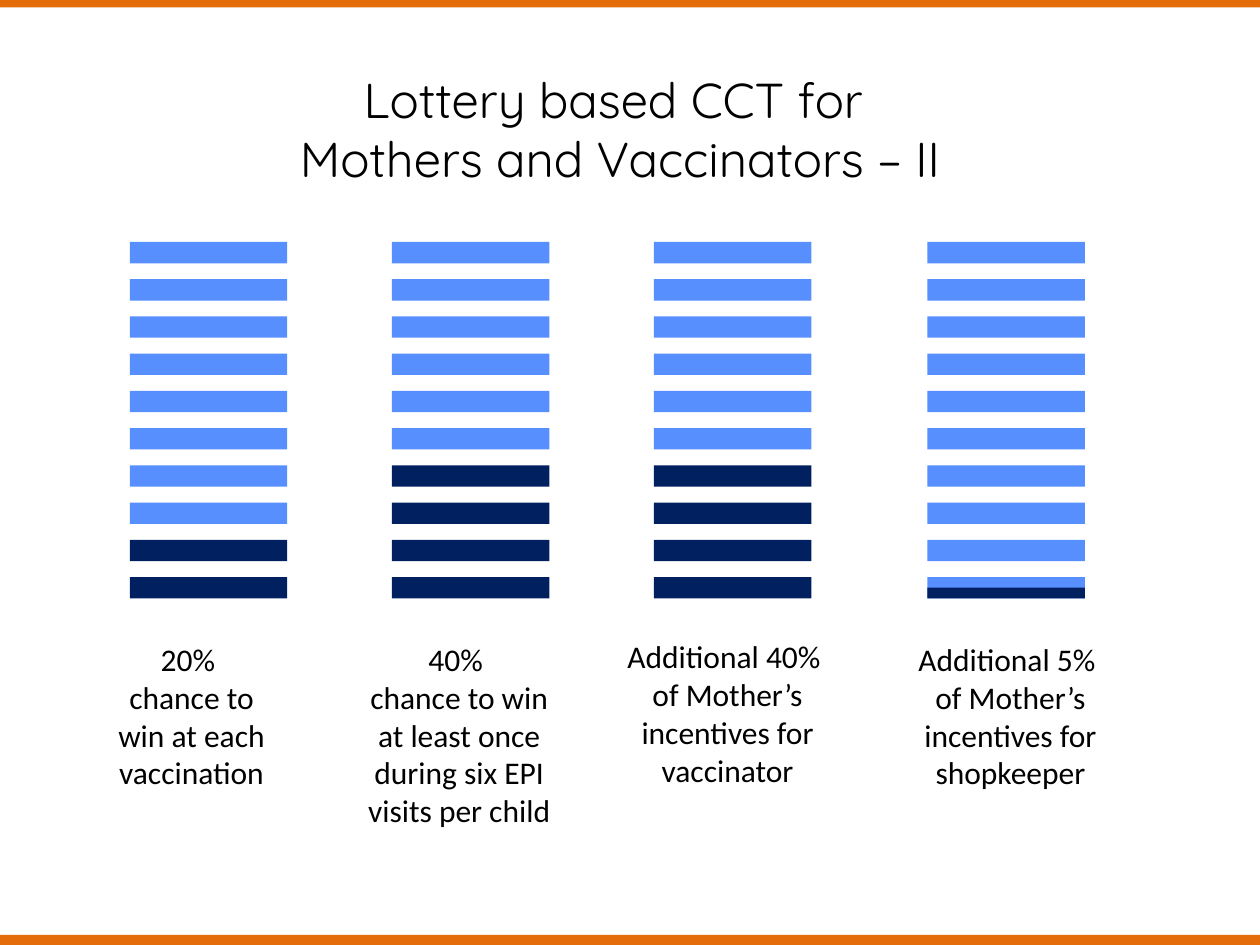
"""Build a slide of four striped bars that show lottery chances and incentives."""
import pptx
import pptx.dml.color
import pptx.enum.shapes
import pptx.enum.text
import pptx.util

Inches = pptx.util.Inches

BLACK, LIGHT_BLUE, NAVY, ORANGE = "000000", "578FFF", "002060", "E46C0A"
STRIPES, STRIPE_TOP, STRIPE_SPAN = 10, 1.92, 2.66
STRIPE_WIDTH, STRIPE_HEIGHT = 1.25, 0.17

COLUMNS = [
    (1.03, 2, ["20% ", "chance to win at each vaccination"],
     (0.75, 5.03, 1.54, 1.31)),
    (3.11, 4, ["40% ", "chance to win at least once during six EPI visits per child"],
     (2.78, 5.03, 1.73, 1.62)),
    (5.19, 4, ["Additional 40% ", "of Mother’s incentives for vaccinator"],
     (4.86, 5.01, 1.83, 1.31)),
    (7.36, 0.5, ["Additional 5% ", "of Mother’s incentives for shopkeeper"],
     (7.1, 5.03, 1.84, 1.31)),
]
BORDERS = [(0, 7.45), (-0.04, 7.42), (0, -0.02)]


def color(value):
    return pptx.dml.color.RGBColor.from_string(value)


class SlideBuilder:
    title_font = {"name": "Quicksand", "size": pptx.util.Pt(28), "bold": False}
    label_font = {"name": "Calibri", "size": pptx.util.Pt(18), "bold": False}

    def __init__(self, slide):
        self.slide = slide

    def fill_text(self, shape, lines, font):
        frame = shape.text_frame
        frame.word_wrap = True
        frame.auto_size = pptx.enum.text.MSO_AUTO_SIZE.SHAPE_TO_FIT_TEXT
        frame.text = "\n".join(lines)
        for paragraph in frame.paragraphs:
            paragraph.alignment = pptx.enum.text.PP_ALIGN.CENTER
            for run in paragraph.runs:
                for name, value in font.items():
                    setattr(run.font, name, value)
                run.font.color.rgb = color(BLACK)

    def title(self, lines, left, top, width, height):
        shape = self.slide.shapes.title
        box = {"left": left, "top": top, "width": width, "height": height}
        for name, value in box.items():
            setattr(shape, name, Inches(value))
        self.fill_text(shape, lines, self.title_font)

    def label(self, lines, *box):
        shape = self.slide.shapes.add_textbox(*map(Inches, box))
        self.fill_text(shape, lines, self.label_font)

    def rectangle(self, fill, *box):
        shape = self.slide.shapes.add_shape(
            pptx.enum.shapes.MSO_SHAPE.RECTANGLE, *map(Inches, box))
        shape.shadow.inherit = False
        shape.fill.solid()
        shape.fill.fore_color.rgb = color(fill)
        shape.line.fill.background()

    def striped_bar(self, left, dark_count):
        whole = int(dark_count)
        for row in range(STRIPES):
            top = STRIPE_TOP + row * STRIPE_SPAN / (STRIPES - 1)
            fill = NAVY if row >= STRIPES - whole else LIGHT_BLUE
            self.rectangle(fill, left, top, STRIPE_WIDTH, STRIPE_HEIGHT)
        part = (dark_count - whole) * STRIPE_HEIGHT
        if part:
            bottom = STRIPE_TOP + STRIPE_SPAN + STRIPE_HEIGHT
            self.rectangle(NAVY, left, bottom - part, STRIPE_WIDTH, part)


def main():
    presentation = pptx.Presentation()
    presentation.slide_width = Inches(10)
    presentation.slide_height = Inches(7.5)
    builder = SlideBuilder(presentation.slides.add_slide(presentation.slide_layouts[5]))
    builder.title(["Lottery based CCT for ", "Mothers and Vaccinators – II"],
                  -0.58, 0.5, 11, 1.04)
    for left, dark_count, lines, box in COLUMNS:
        builder.striped_bar(left, dark_count)
        builder.label(lines, *box)
    for left, top in BORDERS:
        builder.rectangle(ORANGE, left, top, 10.05, 0.08)
    presentation.save("out.pptx")


if __name__ == "__main__":
    main()
